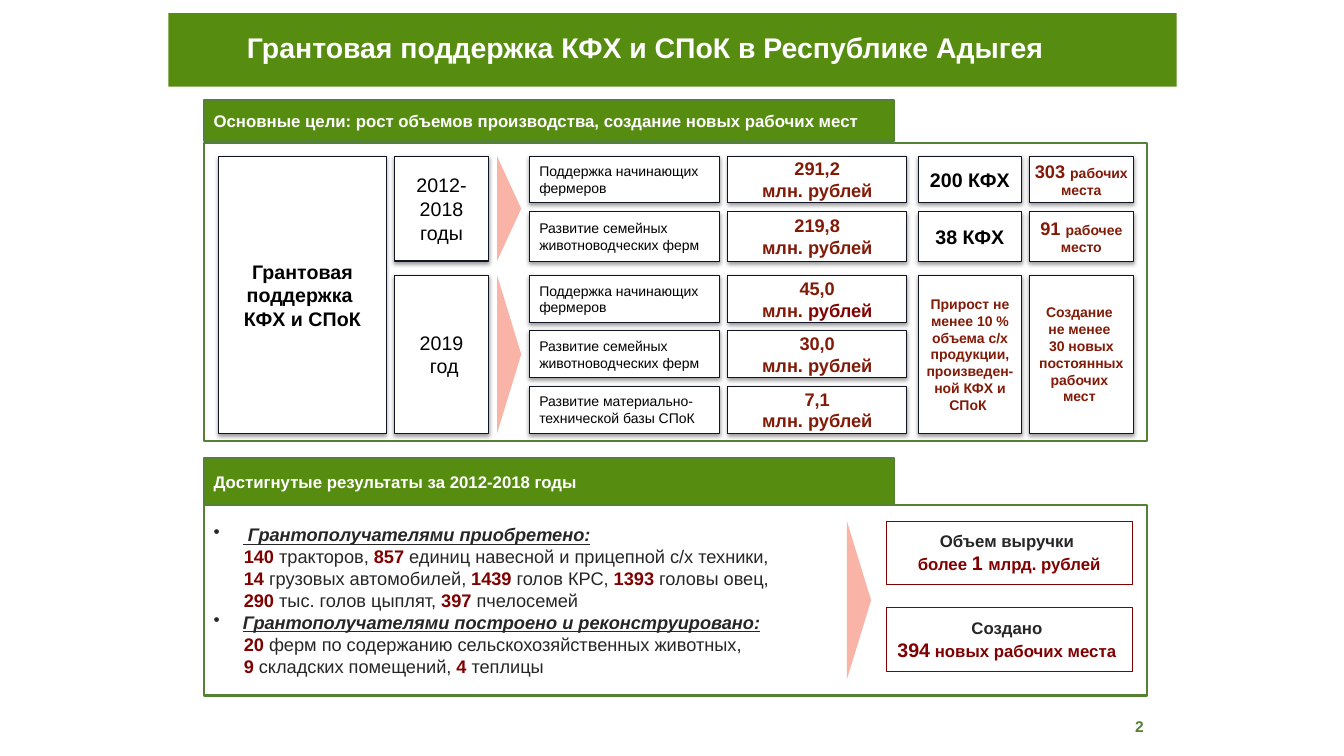
"""Build the slide on grant support for farms and cooperatives in Adygea."""
from lxml.etree import SubElement
from pptx import Presentation
from pptx.dml.color import RGBColor
from pptx.enum.shapes import MSO_SHAPE as Shape
from pptx.enum.text import MSO_ANCHOR as Anchor, MSO_AUTO_SIZE as AutoSize, PP_ALIGN as Align
from pptx.oxml.ns import qn
from pptx.util import Emu, Inches, Pt

TITLE = "Грантовая поддержка КФХ и СПоК в Республике Адыгея"
GOALS = "Основные цели: рост объемов производства, создание новых рабочих мест"
RESULTS = "Достигнутые результаты за 2012-2018 годы"
PAGE = "2"

SUBJECT = "Грантовая поддержка \nКФХ и СПоК"
PERIODS = [("2012-2018 годы", 0, 1), ("2019\n год", 2, 4)]
PROGRAMMES = [
    ("Поддержка начинающих фермеров", "291,2\nмлн. рублей"),
    ("Развитие семейных животноводческих ферм", "219,8\nмлн. рублей"),
    ("Поддержка начинающих фермеров", "45,0\nмлн. *рублей*"),
    ("Развитие семейных животноводческих ферм", "30,0\nмлн. рублей"),
    ("Развитие материально-технической базы СПоК", "7,1\nмлн. рублей"),
]
FARMS = ["200 КФХ", "38 КФХ"]
JOBS = ["*303 *рабочих места", "*91 *рабочее место"]
TARGETS = [
    ("farms", "Прирост не менее 10 % объема с/х продукции, произведен-ной КФХ и СПоК "),
    ("jobs", "Создание \nне менее \n30 новых постоянных рабочих \nмест "),
]
ACHIEVEMENTS = [
    (" Грантополучателями приобретено:",
     "*140 *тракторов, *857* единиц навесной и прицепной с/х техники,\n"
     "*14* грузовых автомобилей, *1439* голов КРС, *1393* головы овец,\n"
     "*290* тыс. голов цыплят, *397* пчелосемей"),
    ("Грантополучателями построено и реконструировано:",
     "*20* ферм по содержанию сельскохозяйственных животных,\n"
     "*9* складских помещений, *4* теплицы"),
]
OUTCOMES = [
    ("Объем выручки ", "более *1 *млрд. рублей", 5.17),
    ("Создано ", "*394* новых рабочих места ", 6.03),
]

COLORS = {
    "white": "FFFFFF", "black": "000000", "green": "568D11", "edge": "548235",
    "ink": "111422", "dark": "262626", "maroon": "800000", "brick": "821A08",
    "arrow": "F9B3A7",
}
COLUMNS = {
    "subject": (2.17, 1.66), "period": (3.91, 0.94), "arrow": (4.93, 0.24),
    "programme": (5.25, 1.89), "money": (7.22, 1.77), "farms": (9.11, 1.02),
    "jobs": (10.21, 1.03),
}
ROWS = [(1.55, 0.46), (2.10, 0.49), (2.73, 0.47), (3.28, 0.47), (3.83, 0.47)]
PANEL_LEFT, PANEL_WIDTH, HEADER_WIDTH = 2.02, 9.36, 6.85
OUTCOME_LEFT, OUTCOME_WIDTH, OUTCOME_HEIGHT = 8.79, 2.44, 0.63
TIGHT = (0.04, 0.02, 0.04, 0.02)

deck = Presentation()
deck.slide_width, deck.slide_height = Inches(13.33), Inches(7.5)
slide = deck.slides.add_slide(deck.slide_layouts[6])


def rgb(name):
    return RGBColor.from_string(COLORS[name])


def write(frame, text, size=10, color="black", bold=False, italic=False, underline=False,
          align=Align.LEFT, accent=None, indent=None, bullet=False, spacing=None):
    """Append one paragraph per line; text between asterisks takes the accent format."""
    for line in text.split("\n"):
        last = frame.paragraphs[-1]
        paragraph = frame.add_paragraph() if last.runs else last
        if indent:
            properties = paragraph._p.get_or_add_pPr()
            properties.set("marL", str(Inches(indent)))
            properties.set("indent", str(-Inches(indent) if bullet else 0))
            if bullet:
                SubElement(properties, qn("a:buChar"), char="•")
        paragraph.alignment = align
        if spacing:
            paragraph.line_spacing = spacing
        for index, part in enumerate(line.split("*")):
            if not part:
                continue
            look = {"size": size, "color": color, "bold": bold}
            if index % 2:
                look.update(accent)
            run = paragraph.add_run()
            run.text = part
            font = run.font
            font.name, font.size, font.bold = "Arial", Pt(look["size"]), look["bold"]
            font.italic, font.underline = italic, underline
            font.color.rgb = rgb(look["color"])


def block(left, top, width, height, fill="white", line=None, weight=0.75,
          insets=(0.1, 0.05, 0.1, 0.05), kind=Shape.RECTANGLE):
    shape = slide.shapes.add_shape(kind, *map(Inches, (left, top, width, height)))
    shape.shadow.inherit = False
    shape.fill.solid()
    shape.fill.fore_color.rgb = rgb(fill)
    if line:
        shape.line.color.rgb = rgb(line)
        shape.line.width = Pt(weight)
    else:
        shape.line.fill.background()
    frame = shape.text_frame
    frame.word_wrap = True
    frame.vertical_anchor = Anchor.MIDDLE
    (frame.margin_left, frame.margin_top,
     frame.margin_right, frame.margin_bottom) = map(Inches, insets)
    return shape


def span(column, first, last):
    left, width = COLUMNS[column]
    top = ROWS[first][0]
    return left, top, width, sum(ROWS[last]) - top


def cell(column, first, last, text, insets=TIGHT, align=Align.CENTER, **look):
    card = block(*span(column, first, last), line="ink", insets=insets)
    effects = card._element.spPr.find(qn("a:effectLst"))
    shadow = SubElement(effects, qn("a:outerShdw"), blurRad=str(Pt(3.1)), dist=str(Pt(1.6)),
                        dir="5400000", algn="ctr", rotWithShape="0")
    tint = SubElement(shadow, qn("a:srgbClr"), val=COLORS["black"])
    SubElement(tint, qn("a:alpha"), val="38000")
    write(card.text_frame, text, align=align, **look)


def arrow(left, top, width, height):
    pointer = block(left, top, width, height, "arrow", kind=Shape.RIGHT_ARROW)
    pointer.adjustments[0], pointer.adjustments[1] = 0.5, 1


def panel(heading, header_top, header_height, top, height):
    body = block(PANEL_LEFT, top, PANEL_WIDTH, height, line="edge", weight=1.5)
    header = block(PANEL_LEFT, header_top, HEADER_WIDTH, header_height, "green", "edge", 1.5)
    write(header.text_frame, heading, size=12, color="white", bold=True)
    return body.text_frame


def main():
    banner = block(1.67, 0.13, 10, 0.73, "green", insets=(0.78, 0, 0, 0))
    write(banner.text_frame, TITLE, size=20.3, color="white", bold=True, spacing=0.85)

    panel(GOALS, 0.99, 0.41, 1.42, 2.96)
    wide = (0.1, 0.05, 0.1, 0.05)
    cell("subject", 0, 4, SUBJECT, wide, size=14, bold=True)
    for period, first, last in PERIODS:
        cell("period", first, last, period, wide, size=14)
        arrow(*span("arrow", first, last))
    for row, (programme, money) in enumerate(PROGRAMMES):
        cell("programme", row, row, programme, wide, Align.LEFT)
        cell("money", row, row, money, size=13, color="brick", bold=True,
             accent={"color": "maroon"})
    for row, (farms, jobs) in enumerate(zip(FARMS, JOBS)):
        cell("farms", row, row, farms, size=14, bold=True)
        cell("jobs", row, row, jobs, color="brick", bold=True, accent={"size": 13})
    for column, target in TARGETS:
        cell(column, 2, 4, target, color="brick", bold=True)

    achieved = panel(RESULTS, 4.54, 0.47, 5.01, 1.89)
    for heading, details in ACHIEVEMENTS:
        write(achieved, heading, size=13, color="dark", bold=True, italic=True,
              underline=True, indent=0.29, bullet=True)
        write(achieved, details, size=13, color="dark", indent=0.3,
              accent={"color": "maroon", "bold": True})
    arrow(8.4, 5.17, 0.24, 1.57)
    for heading, detail, top in OUTCOMES:
        outcome = block(OUTCOME_LEFT, top, OUTCOME_WIDTH, OUTCOME_HEIGHT, line="maroon").text_frame
        write(outcome, heading, size=12, color="dark", bold=True, align=Align.CENTER)
        write(outcome, detail, size=12, color="maroon", bold=True, align=Align.CENTER,
              accent={"size": 14})

    number = slide.shapes.add_textbox(*map(Inches, (11.16, 7.06, 0.29, 0.29))).text_frame
    number.word_wrap = False
    number.auto_size = AutoSize.SHAPE_TO_FIT_TEXT
    write(number, PAGE, size=11.1, color="edge", bold=True)
    deck.save("out.pptx")


if __name__ == "__main__":
    main()
